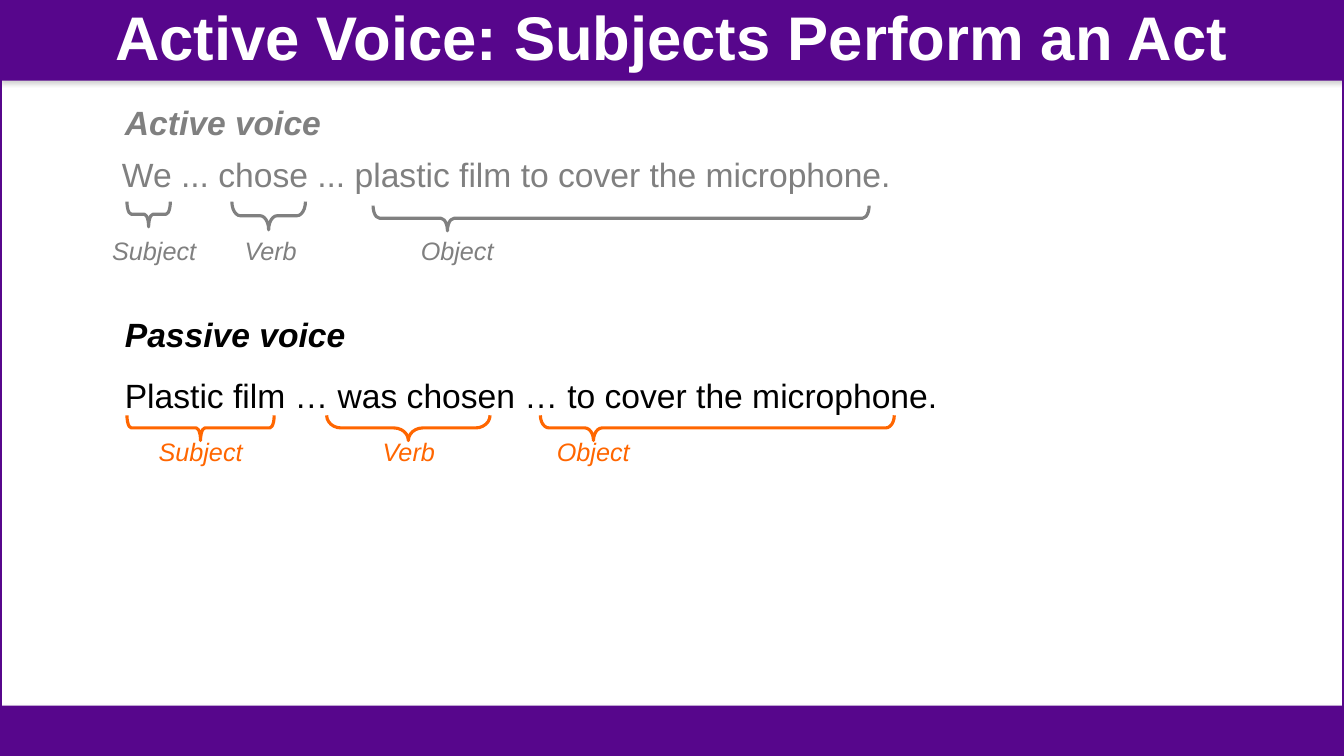
from dataclasses import dataclass

from lxml.etree import SubElement
from pptx import Presentation
from pptx.dml.color import RGBColor
from pptx.enum.shapes import MSO_SHAPE
from pptx.enum.text import MSO_ANCHOR, MSO_AUTO_SIZE, PP_ALIGN
from pptx.oxml.ns import qn
from pptx.util import Inches, Pt


@dataclass(frozen=True)
class Theme:
    font: str = "Arial"
    purple: str = "57068C"
    white: str = "FFFFFF"
    gray: str = "808080"
    black: str = "000000"
    orange: str = "FF6600"
    title: int = 44
    body: int = 24
    label: int = 18
    line: float = 2.25


class Deck:
    def __init__(self, theme):
        self.theme = theme
        self.prs = Presentation()
        self.prs.slide_width, self.prs.slide_height = Inches(13.33), Inches(7.5)
        self.s = self.prs.slides.add_slide(self.prs.slide_layouts[5])

    def style(self, p, size, color, bold=False, italic=False):
        font = p.font
        font.name, font.size = self.theme.font, Pt(size)
        font.bold, font.italic = bold, italic
        font.color.rgb = RGBColor.from_string(color)

    def shape(self, kind, box, line=None):
        sp = self.s.shapes.add_shape(kind, *map(Inches, box))
        sp.shadow.inherit = False
        sp.fill.background()
        if line:
            sp.line.color.rgb = RGBColor.from_string(line)
            sp.line.width = Pt(self.theme.line)
        else:
            sp.line.fill.background()
        return sp

    def bar(self, top, height):
        sp = self.shape(MSO_SHAPE.RECTANGLE, (0, top, 13.33, height))
        sp.fill.solid()
        sp.fill.fore_color.rgb = RGBColor.from_string(self.theme.purple)
        effects = sp.element.spPr.find(qn("a:effectLst"))
        shadow = SubElement(effects, qn("a:outerShdw"), blurRad=str(Pt(3.1)),
                            dist=str(Pt(1.8)), dir="5400000", rotWithShape="0")
        color = SubElement(shadow, qn("a:srgbClr"), val=self.theme.gray)
        SubElement(color, qn("a:alpha"), val="35000")

    def title(self, text):
        sp = self.s.shapes.title
        sp.left, sp.top, sp.width, sp.height = map(Inches, (0, 0, 13.33, 0.8))
        # Bring the title in front of the header bar
        sp.element.getparent().append(sp.element)
        tf = sp.text_frame
        tf.text = text
        tf.auto_size = MSO_AUTO_SIZE.NONE
        tf.vertical_anchor = MSO_ANCHOR.MIDDLE
        p = tf.paragraphs[0]
        p.alignment, p.line_spacing = PP_ALIGN.CENTER, 0.9
        self.style(p, self.theme.title, self.theme.white, bold=True)

    def text(self, text, box, size, color, wrap=False, bold=False, italic=False,
             align=PP_ALIGN.LEFT):
        tf = self.s.shapes.add_textbox(*map(Inches, box)).text_frame
        tf.word_wrap = wrap
        p = tf.paragraphs[0]
        p.text, p.alignment = text, align
        self.style(p, size, color, bold, italic)
        return tf

    def brace(self, left, top, length, depth, curve, tip, color):
        """Downward brace: a left brace turned a quarter about its centre."""
        shift = (length - depth) / 2
        sp = self.shape(MSO_SHAPE.LEFT_BRACE,
                        (left + shift, top - shift, depth, length), color)
        sp.rotation = 270
        sp.adjustments[0], sp.adjustments[1] = curve, tip

    def labels(self, top, lefts, color):
        words = (("Subject", 1.04), ("Verb", 0.73), ("Object", 0.93))
        for (word, width), left in zip(words, lefts):
            self.text(word, (left, top, width, 0.4), self.theme.label, color,
                      italic=True, align=PP_ALIGN.CENTER)


def main():
    t = Theme()
    deck = Deck(t)

    # Header, frame and footer
    deck.bar(0, 0.8)
    deck.shape(MSO_SHAPE.RECTANGLE, (0, 0, 13.33, 7.5), t.purple)
    deck.bar(7, 0.5)
    deck.title("Active Voice: Subjects Perform an Act")

    # Active voice
    deck.text("Active voice", (1.14, 0.96, 2.17, 0.5), t.body, t.gray,
              bold=True, italic=True)
    tf = deck.text("We ... chose ... plastic film to cover the microphone.",
                   (1.14, 1.56, 8.83, 0.41), t.body, t.gray, wrap=True)
    tf.margin_left = tf.margin_right = Inches(0.07)
    tf.margin_top = tf.margin_bottom = Inches(0.03)
    tf.paragraphs[0].line_spacing = 0.85
    deck.labels(2.29, (1.01, 2.32, 4.07), t.gray)
    deck.brace(1.26, 2, 0.43, 0.25, 0.17, 0.5, t.gray)
    deck.brace(2.3, 2, 0.73, 0.28, 0.3, 0.5, t.gray)
    deck.brace(3.7, 2.04, 4.92, 0.25, 0.26, 0.15, t.gray)

    # Passive voice
    deck.text("Passive voice", (1.14, 3.07, 2.41, 0.5), t.body, t.black,
              bold=True, italic=True)
    deck.text("Plastic film … was chosen … to cover the microphone.",
              (1.14, 3.67, 9, 0.4), t.body, t.black, wrap=True)
    deck.labels(4.28, (1.47, 3.69, 5.42), t.orange)
    for left, length, curve, tip in ((1.26, 1.46, 0.17, 0.5),
                                     (3.24, 1.62, 0.57, 0.5),
                                     (5.36, 3.51, 0.34, 0.15)):
        deck.brace(left, 4.12, length, 0.25, curve, tip, t.orange)

    deck.prs.save("out.pptx")


if __name__ == "__main__":
    main()
